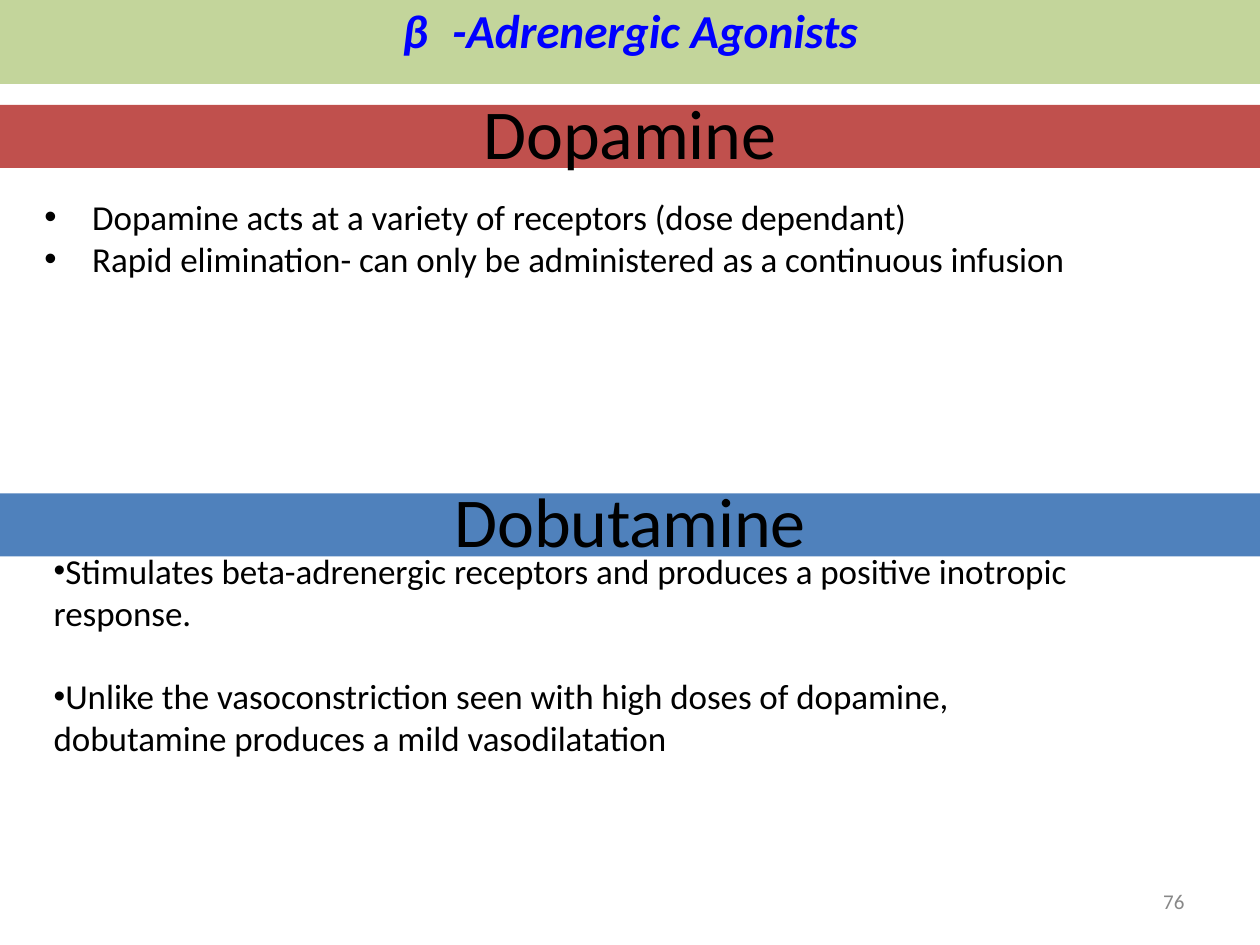
from lxml.etree import SubElement
from pptx import Presentation
from pptx.dml.color import RGBColor
from pptx.enum.shapes import MSO_SHAPE
from pptx.enum.text import PP_ALIGN
from pptx.oxml.ns import qn
from pptx.util import Inches, Pt

GREEN = RGBColor(0xC3, 0xD5, 0x9B)
RED = RGBColor(0xC0, 0x50, 0x4D)
STEEL = RGBColor(0x4F, 0x81, 0xBC)
BLUE = RGBColor(0x00, 0x00, 0xFF)
BLACK = RGBColor(0x00, 0x00, 0x00)
GREY = RGBColor(0x88, 0x88, 0x88)

FONT = "Calibri"
UNIT = Inches(1) / 12  # one row or column: the page is 120 columns by 90 rows
COLUMNS, ROWS = 120, 90


def grid(*cells):
    return [round(cell * UNIT) for cell in cells]


def add_band(page, top, rows, colour):
    band = page.shapes.add_shape(MSO_SHAPE.RECTANGLE, *grid(0, top, COLUMNS, rows))
    band.shadow.inherit = False
    band.fill.solid()
    band.fill.fore_color.rgb = colour
    band.line.fill.background()


def add_frame(page, box, wrap=True):
    frame = page.shapes.add_textbox(*grid(*box)).text_frame
    frame.margin_left = frame.margin_right = frame.margin_bottom = 0
    frame.margin_top = Inches(0.01)
    frame.word_wrap = wrap
    return frame


def add_centred_para(page, top, columns, rows):
    box = ((COLUMNS - columns) / 2, top, columns, rows)
    para = add_frame(page, box, wrap=False).paragraphs[0]
    para.alignment = PP_ALIGN.CENTER
    para.space_before = Pt(1)
    return para


def add_span(para, text, size, colour=BLACK, tracking=0):
    """Add a run; tracking is in hundredths of a point."""
    span = para.add_run()
    span.text = text
    span.font.name = FONT
    span.font.size = Pt(size)
    span.font.color.rgb = colour
    if tracking:
        span.font._element.set("spc", str(tracking))
    return span


def set_indent(para, left, first):
    properties = para._p.get_or_add_pPr()
    properties.set("marL", str(Inches(left)))
    properties.set("indent", str(Inches(first)))
    return properties


def add_title(page, top, rows):
    add_band(page, top, rows, GREEN)
    para = add_centred_para(page, top, 43.7, 5.8)
    # The widely tracked space sets the gap after the Greek letter.
    for text, tracking in (("β", 0), (" ", 760), ("-Adrenergic Agonists", -5)):
        span = add_span(para, text, 27, BLUE, tracking)
        span.font.bold = span.font.italic = True


def add_heading(page, top, rows, columns, text, colour):
    """Draw a band with a large heading centred over it."""
    add_band(page, top, rows, colour)
    para = add_centred_para(page, top - 1.6, columns, 8.3)
    add_span(para, text, 40, tracking=-10)


def add_bullets(page, box, items, left, first, gap=0, bullet_size=100):
    frame = add_frame(page, box)
    for number, text in enumerate(items):
        para = frame.add_paragraph() if number else frame.paragraphs[0]
        para.space_before = Pt(gap if number else 1)
        properties = set_indent(para, left, first)
        SubElement(properties, qn("a:buSzPct"), val=str(bullet_size * 1000))
        SubElement(properties, qn("a:buFont"), typeface="Arial")
        SubElement(properties, qn("a:buChar"), char="•")
        add_span(para, text, 20, tracking=-5)


def add_page_number(page, box, number):
    para = add_frame(page, box).paragraphs[0]
    para.line_spacing = Pt(12.4)
    set_indent(para, 0.04, 0)
    add_span(para, number, 12, GREY)


def main():
    deck = Presentation()
    deck.slide_width, deck.slide_height = grid(COLUMNS, ROWS)
    page = deck.slides.add_slide(deck.slide_layouts[6])

    add_title(page, 0, 8)
    add_heading(page, 10, 6, 28.3, "Dopamine", RED)
    add_bullets(page, (4.1, 18.5, 98, 8.4), (
        "Dopamine acts at a variety of receptors (dose dependant)",
        "Rapid elimination- can only be administered as a continuous infusion",
    ), left=0.39, first=-0.38)
    add_heading(page, 47, 6, 34, "Dobutamine", STEEL)
    add_bullets(page, (5, 52.2, 97.5, 20.4), (
        "Stimulates beta-adrenergic receptors and produces a positive inotropic response.",
        "Unlike the vasoconstriction seen with high doses of dopamine, "
        "dobutamine produces a mild vasodilatation",
    ), left=0.01, first=0, gap=23.6, bullet_size=95)
    add_page_number(page, (110.3, 84.8, 3, 2.3), "76")

    deck.save("out.pptx")


if __name__ == "__main__":
    main()
